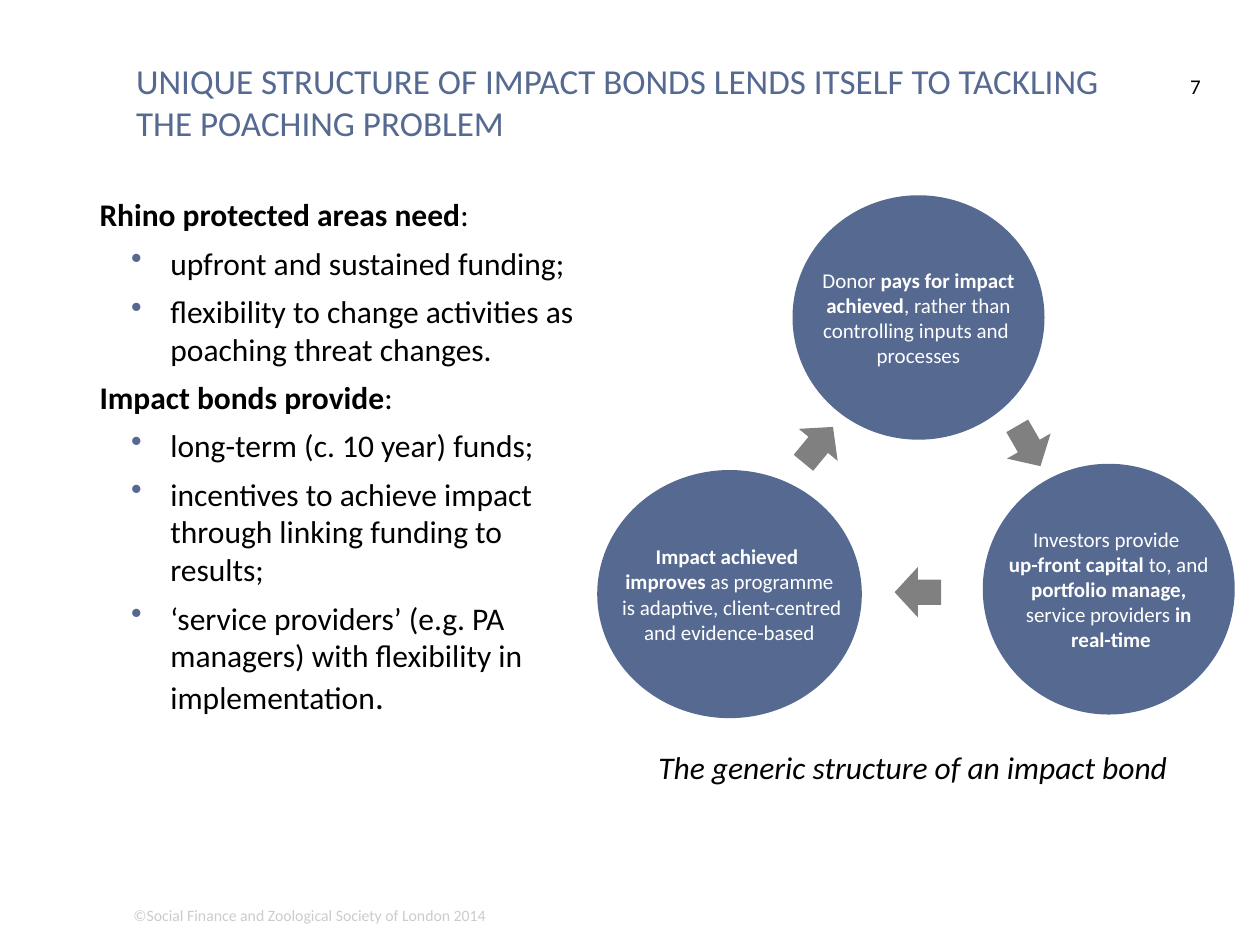
from dataclasses import dataclass
from typing import Sequence

from pptx import Presentation
from pptx.dml.color import RGBColor
from pptx.enum.shapes import MSO_SHAPE
from pptx.enum.text import MSO_ANCHOR, MSO_AUTO_SIZE, PP_ALIGN
from pptx.oxml.ns import qn
from pptx.util import Pt
from lxml.etree import SubElement

COLORS = {
    "blue": "556991",
    "grey": "808080",
    "pale": "CCCCCC",
    "white": "FFFFFF",
    "black": "000000",
}
FONT = "Calibri"


@dataclass(frozen=True)
class Span:
    text: str
    bold: bool = False
    italic: bool = False
    size: float | None = None


@dataclass(frozen=True)
class Frame:
    left: float
    top: float
    width: float
    height: float

    def lengths(self) -> tuple:
        return Pt(self.left), Pt(self.top), Pt(self.width), Pt(self.height)


@dataclass(frozen=True)
class Circle:
    frame: Frame
    lines: Sequence[Sequence[Span]]


@dataclass(frozen=True)
class Arrow:
    left: float
    top: float
    rotation: float


@dataclass(frozen=True)
class BodyLine:
    spans: Sequence[Span]
    bulleted: bool = True


CIRCLES = [
    Circle(Frame(561.6, 265, 144, 143.3), [
        [Span("Investors provide ")],
        [Span("up-front capital", True), Span(" to, and")],
        [Span("portfolio manage,", True)],
        [Span("service providers "), Span("in", True)],
        [Span(" "), Span("real-time", True)],
    ]),
    Circle(Frame(452.9, 111.6, 144, 139.7), [
        [Span("Donor "), Span("pays for impact", True)],
        [Span(" achieved", True), Span(", rather than ")],
        [Span("controlling inputs and ")],
        [Span("processes")],
    ]),
    Circle(Frame(341.3, 268.6, 151.2, 141.8), [
        [Span("Impact achieved ", True)],
        [Span("improves ", True), Span("as programme")],
        [Span(" is adaptive, client-centred")],
        [Span("and evidence-based")],
    ]),
]

ARROWS = [Arrow(574.6, 240.5, 60), Arrow(454.3, 239.8, 309.5), Arrow(511.2, 324, 180)]

BODY = [
    BodyLine([Span("Rhino protected areas need", True), Span(":")], False),
    BodyLine([Span("upfront and sustained funding;")]),
    BodyLine([Span("flexibility to change activities as poaching threat changes.")]),
    BodyLine([Span("Impact bonds provide", True), Span(":")], False),
    BodyLine([Span("long-term (c. 10 year) funds;")]),
    BodyLine([Span("incentives to achieve impact through linking funding to results;")]),
    BodyLine([
        Span("‘service providers’ (e.g. PA managers) with flexibility in implementation"),
        Span(".", size=20),
    ]),
]


def color(name: str) -> RGBColor:
    return RGBColor.from_string(COLORS[name])


def write_lines(text_frame, lines: Sequence[Sequence[Span]], size: float,
                color_name: str, align=PP_ALIGN.LEFT) -> None:
    for index, spans in enumerate(lines):
        para = text_frame.paragraphs[0] if index == 0 else text_frame.add_paragraph()
        para.alignment = align
        for span in spans:
            run = para.add_run()
            run.text = span.text
            run.font.name = FONT
            run.font.size = Pt(span.size or size)
            run.font.bold = span.bold
            run.font.italic = span.italic
            run.font.color.rgb = color(color_name)


def clear_margins(text_frame) -> None:
    text_frame.word_wrap = True
    text_frame.auto_size = MSO_AUTO_SIZE.NONE
    text_frame.vertical_anchor = MSO_ANCHOR.TOP
    text_frame.margin_left = text_frame.margin_right = 0
    text_frame.margin_top = text_frame.margin_bottom = 0


def add_text(page, frame: Frame, lines: Sequence[Sequence[Span]], size: float,
             color_name: str = "black", align=PP_ALIGN.LEFT):
    box = page.shapes.add_textbox(*frame.lengths())
    clear_margins(box.text_frame)
    write_lines(box.text_frame, lines, size, color_name, align)
    return box


def add_filled(page, kind, frame: Frame, color_name: str):
    shape = page.shapes.add_shape(kind, *frame.lengths())
    shape.shadow.inherit = False
    shape.fill.solid()
    shape.fill.fore_color.rgb = color(color_name)
    shape.line.fill.background()
    return shape


def add_circle(page, circle: Circle) -> None:
    shape = add_filled(page, MSO_SHAPE.OVAL, circle.frame, "blue")
    shape.text_frame.word_wrap = False
    shape.text_frame.vertical_anchor = MSO_ANCHOR.MIDDLE
    write_lines(shape.text_frame, circle.lines, 12, "white", PP_ALIGN.CENTER)


def add_arrow(page, arrow: Arrow) -> None:
    frame = Frame(arrow.left, arrow.top, 26.6, 28.8)
    shape = add_filled(page, MSO_SHAPE.RIGHT_ARROW, frame, "grey")
    shape.rotation = arrow.rotation


def format_body_line(para, bulleted: bool) -> None:
    properties = para._p.get_or_add_pPr()
    properties.set("marL", str(Pt(40.5 if bulleted else 22.5)))
    properties.set("indent", str(Pt(-22.5)))
    if bulleted:
        para.level = 1
        bullet_color = SubElement(properties, qn("a:buClr"))
        SubElement(bullet_color, qn("a:srgbClr")).set("val", COLORS["blue"])
        SubElement(properties, qn("a:buChar")).set("char", "•")


def add_body(page) -> None:
    box = add_text(page, Frame(56.9, 111.6, 271.5, 371.5), [line.spans for line in BODY], 18)
    for index, (para, line) in enumerate(zip(box.text_frame.paragraphs, BODY)):
        format_body_line(para, line.bulleted)
        if index:
            para.space_before = Pt(6)


def add_title(page) -> None:
    title = page.shapes.title
    title.left, title.top, title.width, title.height = Frame(77.8, 33.8, 574.6, 53.3).lengths()
    clear_margins(title.text_frame)
    text = "UNIQUE STRUCTURE OF IMPACT BONDS LENDS ITSELF TO TACKLING THE POACHING PROBLEM"
    write_lines(title.text_frame, [[Span(text)]], 20, "blue")


def main() -> None:
    deck = Presentation()
    deck.slide_width, deck.slide_height = Pt(720), Pt(540)
    page = deck.slides.add_slide(deck.slide_layouts[5])
    add_title(page)
    add_text(page, Frame(76.3, 517.7, 607.7, 10.8),
             [[Span("©Social Finance and Zoological Society of London 2014")]], 9, "pale")
    add_text(page, Frame(666, 41.8, 20.2, 28.8), [[Span("7")]], 12, align=PP_ALIGN.RIGHT)
    add_body(page)
    for circle in CIRCLES:
        add_circle(page, circle)
    for arrow in ARROWS:
        add_arrow(page, arrow)
    caption = add_filled(page, MSO_SHAPE.RECTANGLE, Frame(373.7, 427.7, 295.9, 72.7), "white")
    clear_margins(caption.text_frame)
    write_lines(caption.text_frame,
                [[Span("The generic structure of an impact bond", italic=True)]],
                18, "black", PP_ALIGN.CENTER)
    deck.save("out.pptx")


if __name__ == "__main__":
    main()
